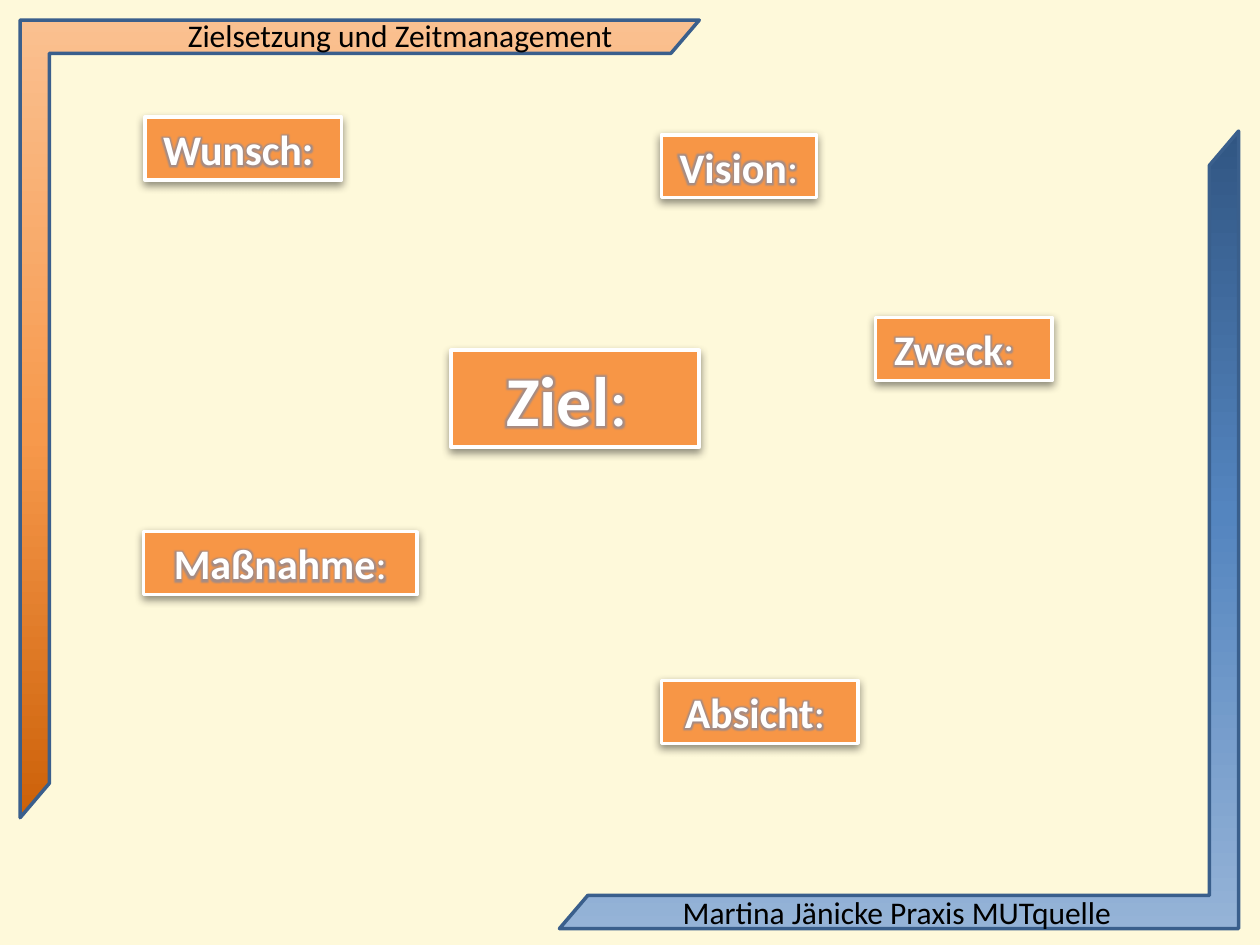
from dataclasses import dataclass

import lxml.etree
import pptx
import pptx.dml.color
import pptx.enum.shapes
import pptx.enum.text
import pptx.oxml
import pptx.oxml.ns
import pptx.util

Inches = pptx.util.Inches
Pt = pptx.util.Pt
ALIGN = pptx.enum.text.PP_ALIGN
SHAPE = pptx.enum.shapes.MSO_SHAPE
SPACE = pptx.oxml.ns.nsdecls("a")


@dataclass
class Frame:
    left: float
    top: float
    turn: int
    stops: list[tuple[int, str]]


@dataclass
class Label:
    word: str
    tail: str
    left: float
    top: float
    width: float
    height: float = 0.5
    size: int = 24


FRAMES = [
    Frame(0.16, 0.16, 0, [(0, "CC6109"), (48, "F7994C"), (100, "FAC090")]),
    Frame(4.44, 1.04, 180, [(0, "315683"), (48, "5485BF"), (100, "95B3D7")]),
]
LABELS = [
    Label("Absicht", ": ", 5.25, 5.4, 1.56),
    Label("Vision", ":", 5.25, 1.07, 1.23),
    Label("Maßnahme", ":", 1.14, 4.22, 2.17),
    Label("Zweck", ":  ", 6.95, 2.52, 1.4),
    Label("Wunsch: ", "", 1.15, 0.93, 1.56),
    Label("Ziel", ": ", 3.58, 2.78, 1.97, 0.77, 40),
]
SHADOW = f"""<a:effectLst {SPACE}>
  <a:outerShdw blurRad="63500" dist="25400" dir="5400000" rotWithShape="0">
    <a:srgbClr val="000000"><a:alpha val="43000"/></a:srgbClr>
  </a:outerShdw></a:effectLst>"""
GLOW = f"""<a:effectLst {SPACE}>
  <a:glow rad="63500"><a:srgbClr val="5382C4"><a:alpha val="50000"/></a:srgbClr></a:glow>
</a:effectLst>"""


def color(code: str) -> pptx.dml.color.RGBColor:
    return pptx.dml.color.RGBColor.from_string(code)


def write(para, text: str, *, size: int = 18, tint: str = "000000",
          bold: bool = False, glow: bool = False) -> None:
    run = para.add_run()
    run.text = text
    font = run.font
    font.size, font.bold, font.name = Pt(size), bold, "Calibri"
    font.color.rgb = color(tint)
    if glow:
        fill = run.element.xpath("a:rPr/a:solidFill")[0] if hasattr(run, "element") \
            else para.runs[-1].font.fill._xPr.find(pptx.oxml.ns.qn("a:solidFill"))
        fill.addnext(pptx.oxml.parse_xml(GLOW))


def outline(shape, tint: str) -> None:
    shape.line.color.rgb = color(tint)
    shape.line.width = Pt(2)


def draw_frame(slide, frame: Frame) -> None:
    shape = slide.shapes.add_shape(SHAPE.HALF_FRAME, Inches(frame.left), Inches(frame.top),
                                   Inches(5.39), Inches(6.33))
    shape.shadow.inherit = False
    shape.rotation = frame.turn
    shape.adjustments[0], shape.adjustments[1] = 0.049, 0.043
    outline(shape, "3A5F8C")
    shape.fill.gradient()
    shape.fill.gradient_angle = 90
    ramp = shape.element.xpath(".//a:gsLst")[0]
    for stop in list(ramp):
        ramp.remove(stop)
    for place, tint in frame.stops:
        stop = lxml.etree.SubElement(ramp, pptx.oxml.ns.qn("a:gs"), pos=str(place * 1000))
        lxml.etree.SubElement(stop, pptx.oxml.ns.qn("a:srgbClr"), val=tint)


def draw_label(slide, label: Label) -> None:
    shape = slide.shapes.add_shape(SHAPE.RECTANGLE, Inches(label.left), Inches(label.top),
                                   Inches(label.width), Inches(label.height))
    shape.fill.solid()
    shape.fill.fore_color.rgb = color("F79646")
    outline(shape, "FFFFFF")
    shape.element.spPr.append(pptx.oxml.parse_xml(SHADOW))
    para = shape.text_frame.paragraphs[0]
    para.alignment = ALIGN.CENTER
    write(para, label.word, size=label.size, tint="FFFFFF", bold=True, glow=True)
    if label.tail:
        write(para, label.tail, size=label.size, tint="FFFFFF", glow=True)


def draw_line(shape, text: str, left: float, top: float) -> None:
    """Put one unwrapped line of text on a frame's bar."""
    shape.left, shape.top = Inches(left), Inches(top)
    shape.width, shape.height = Inches(3.62), Inches(0.4)
    frame = shape.text_frame
    frame.word_wrap = False
    frame.auto_size = pptx.enum.text.MSO_AUTO_SIZE.SHAPE_TO_FIT_TEXT
    frame.vertical_anchor = pptx.enum.text.MSO_ANCHOR.TOP
    frame.paragraphs[0].alignment = ALIGN.LEFT
    write(frame.paragraphs[0], text)


def main() -> None:
    deck = pptx.Presentation()
    deck.slide_width, deck.slide_height = Inches(10), Inches(7.5)
    slide = deck.slides.add_slide(deck.slide_layouts[5])
    slide.background.fill.solid()
    slide.background.fill.fore_color.rgb = color("FEF9DA")
    for frame in FRAMES:
        draw_frame(slide, frame)
    title = slide.shapes.title
    title.element.getparent().append(title.element)  # bring in front of the frames
    draw_line(title, "Zielsetzung und Zeitmanagement", 1.39, 0.08)
    foot = slide.shapes.add_textbox(0, 0, 0, 0)
    draw_line(foot, "Martina Jänicke Praxis MUTquelle", 5.32, 7.04)
    for label in LABELS:
        draw_label(slide, label)
    deck.save("out.pptx")


if __name__ == "__main__":
    main()
